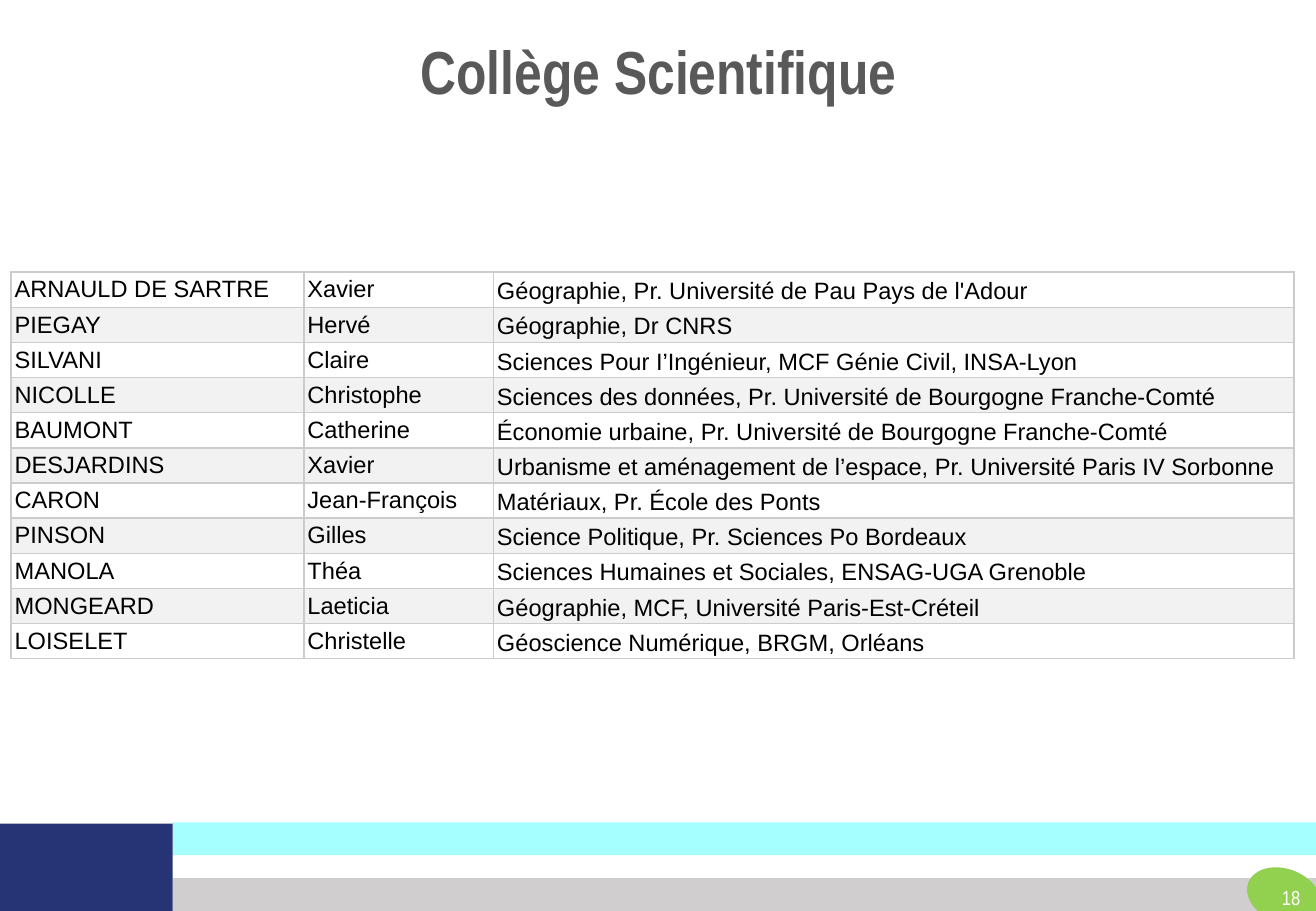
from lxml import etree
from pptx import Presentation
from pptx.dml.color import RGBColor
from pptx.enum.shapes import MSO_SHAPE
from pptx.enum.text import MSO_ANCHOR, MSO_AUTO_SIZE, PP_ALIGN
from pptx.oxml.ns import qn
from pptx.util import Inches, Pt

RECTANGLE, OVAL = MSO_SHAPE.RECTANGLE, MSO_SHAPE.OVAL
MIDDLE, BOTTOM = MSO_ANCHOR.MIDDLE, MSO_ANCHOR.BOTTOM
LEFT, CENTER, RIGHT = PP_ALIGN.LEFT, PP_ALIGN.CENTER, PP_ALIGN.RIGHT
NO_AUTOFIT = MSO_AUTO_SIZE.NONE

NAVY = RGBColor(0x26, 0x34, 0x75)
CYAN = RGBColor(0xA4, 0xFF, 0xFE)
GREY = RGBColor(0xD0, 0xCE, 0xCE)
GREEN = RGBColor(0x92, 0xD0, 0x50)
TITLE_GREY = RGBColor(0x59, 0x59, 0x59)
BAND_GREY = RGBColor(0xF2, 0xF2, 0xF2)
BORDER_GREY = RGBColor(0xCC, 0xCC, 0xCC)
BLACK = RGBColor(0, 0, 0)
WHITE = RGBColor(0xFF, 0xFF, 0xFF)

WIDTH, HEIGHT = 10.83, 7.5
BLOCK_WIDTH = 1.42
BAR_HEIGHT = 0.27
COLUMN_WIDTHS = (2.41, 1.56, 6.59)
ROW_HEIGHT = 0.27

MEMBERS = [
    ("ARNAULD DE SARTRE", "Xavier", "Géographie, Pr. Université de Pau Pays de l'Adour"),
    ("PIEGAY", "Hervé", "Géographie, Dr CNRS"),
    ("SILVANI", "Claire", "Sciences Pour I’Ingénieur, MCF Génie Civil, INSA-Lyon"),
    ("NICOLLE", "Christophe", "Sciences des données, Pr. Université de Bourgogne Franche-Comté"),
    ("BAUMONT", "Catherine", "Économie urbaine, Pr. Université de Bourgogne Franche-Comté"),
    ("DESJARDINS", "Xavier", "Urbanisme et aménagement de l’espace, Pr. Université Paris IV Sorbonne"),
    ("CARON", "Jean-François", "Matériaux, Pr. École des Ponts"),
    ("PINSON", "Gilles", "Science Politique, Pr. Sciences Po Bordeaux"),
    ("MANOLA", "Théa", "Sciences Humaines et Sociales, ENSAG-UGA Grenoble"),
    ("MONGEARD", "Laeticia", "Géographie, MCF, Université Paris-Est-Créteil"),
    ("LOISELET", "Christelle", "Géoscience Numérique, BRGM, Orléans"),
]


def write(frame, text, size=14, name="Arial", color=BLACK, bold=False, align=LEFT, spacing=1.0):
    para = frame.paragraphs[0]
    para.alignment = align
    para.line_spacing = spacing
    span = para.add_run()
    span.text = text
    span.font.size = Pt(size)
    span.font.name = name
    span.font.bold = bold
    span.font.color.rgb = color


def add_block(page, kind, left, top, width, height, color):
    block = page.shapes.add_shape(kind, Inches(left), Inches(top), Inches(width), Inches(height))
    block.shadow.inherit = False
    block.fill.solid()
    block.fill.fore_color.rgb = color
    block.line.fill.background()
    return block


deck = Presentation()
deck.slide_width, deck.slide_height = Inches(WIDTH), Inches(HEIGHT)
page = deck.slides.add_slide(deck.slide_layouts[5])

for top, color in ((HEIGHT - BAR_HEIGHT, GREY), (6.77, CYAN)):
    add_block(page, RECTANGLE, BLOCK_WIDTH, top, WIDTH - BLOCK_WIDTH, BAR_HEIGHT, color)
badge = add_block(page, OVAL, 10.26, 7.16, 0.61, 0.43, GREEN)
badge.rotation = 20
badge.line.color.rgb = GREEN
badge.line.width = Pt(1)
add_block(page, RECTANGLE, 0, 6.78, BLOCK_WIDTH, HEIGHT - 6.78, NAVY)

title = page.shapes.title
title.left, title.top = Inches(0.09), Inches(0.09)
title.width, title.height = Inches(10.66), Inches(1.06)
title.text_frame.vertical_anchor = MIDDLE
title.text_frame.auto_size = NO_AUTOFIT
write(title.text_frame, "Collège Scientifique", size=36, name="Arial Narrow",
      color=TITLE_GREY, bold=True, align=CENTER, spacing=0.9)

number = page.shapes.add_textbox(Inches(10.24), Inches(7.19), Inches(0.56), Inches(0.4))
number.text_frame.word_wrap = True
number.text_frame.vertical_anchor = MIDDLE
write(number.text_frame, "18", size=12, name="Arial Narrow", color=WHITE, align=RIGHT)

table = page.shapes.add_table(
    len(MEMBERS), len(COLUMN_WIDTHS), Inches(0.09), Inches(2.24),
    Inches(sum(COLUMN_WIDTHS)), Inches(ROW_HEIGHT * len(MEMBERS))).table
table.first_row = False
table.horz_banding = False
for column, width in zip(table.columns, COLUMN_WIDTHS):
    column.width = Inches(width)

for row, member in enumerate(MEMBERS):
    table.rows[row].height = Inches(ROW_HEIGHT)
    for column, text in enumerate(member):
        cell = table.cell(row, column)
        is_field = column == 2
        cell.margin_left = cell.margin_right = Inches(0.03)
        cell.margin_top = cell.margin_bottom = Inches(0.02)
        cell.vertical_anchor = BOTTOM if is_field else MIDDLE
        write(cell.text_frame, text, spacing=1.07 if is_field else 1.0)
        properties = cell._tc.get_or_add_tcPr()
        for side in ("a:lnL", "a:lnR", "a:lnT", "a:lnB"):
            border = etree.SubElement(properties, qn(side), w=str(Pt(1)))
            paint = etree.SubElement(border, qn("a:solidFill"))
            etree.SubElement(paint, qn("a:srgbClr"), val=str(BORDER_GREY))
        if row % 2:
            cell.fill.solid()
            cell.fill.fore_color.rgb = BAND_GREY
        else:
            cell.fill.background()

deck.save("out.pptx")
